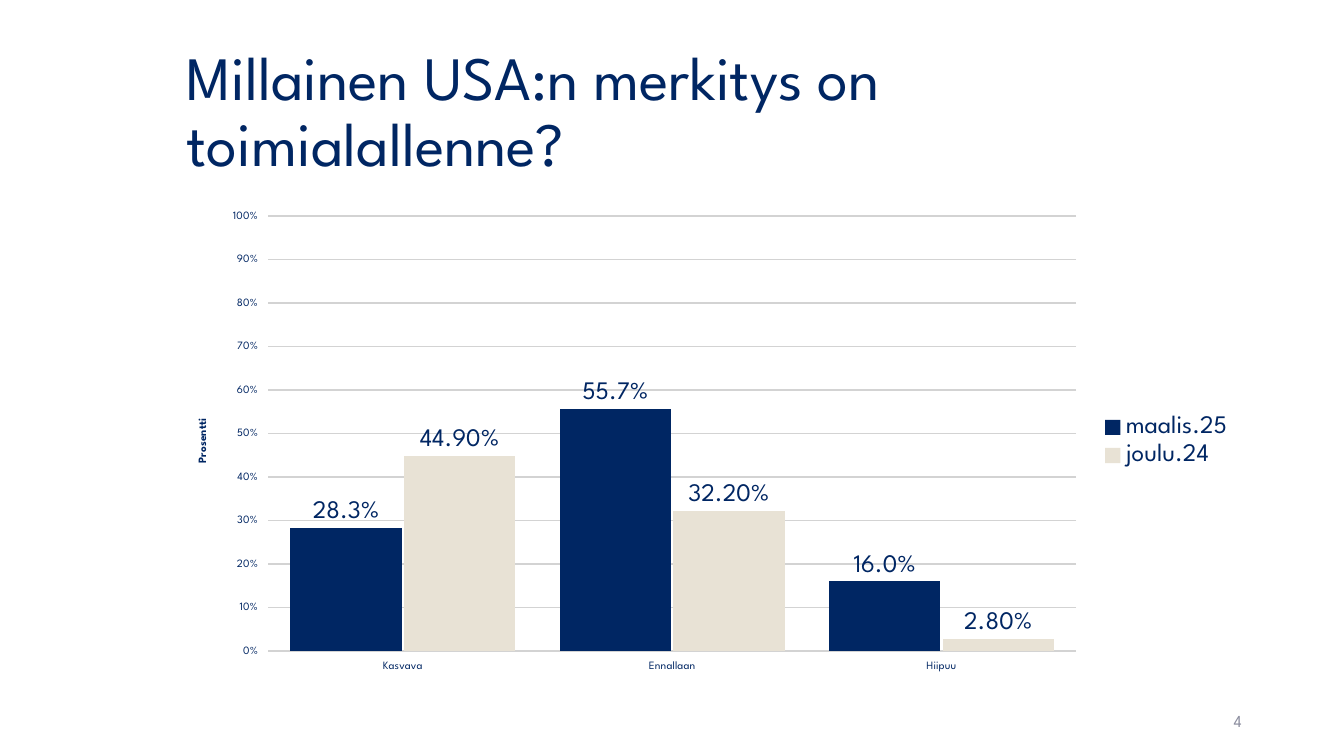
from lxml.etree import SubElement as Sub
from pptx import Presentation
from pptx.chart.data import CategoryChartData as Data
from pptx.dml.color import RGBColor as RGB
from pptx.enum.chart import XL_CHART_TYPE as Kind, XL_LABEL_POSITION as Spot
from pptx.enum.chart import XL_LEGEND_POSITION as Side
from pptx.enum.text import MSO_ANCHOR as Anchor, PP_ALIGN as Align
from pptx.oxml.ns import qn
from pptx.util import Pt

HUES = {"navy": "002663", "sand": "E8E2D5", "gray": "8C8E9F", "grid": "D3D3D3"}
FACE = "League Spartan"
LEFT, WIDE = 126, 762.5


def style(font, size, hue="navy"):
    font.name, font.size = FACE, Pt(size)
    font.color.rgb = RGB.from_string(HUES[hue])


def write(frame, text, size=18, hue="navy", align=Align.LEFT, lead=None, after=0):
    par = frame.paragraphs[0]
    par.alignment, par.line_spacing, par.space_after = align, lead, Pt(after)
    run = par.add_run()
    run.text = text
    style(run.font, size, hue)


class Deck:
    """Style and current slide, with one method for each kind of element."""

    def __init__(self):
        self.file = Presentation()
        self.file.slide_width, self.file.slide_height = Pt(960), Pt(540)
        self.page = self.file.slides.add_slide(self.file.slide_layouts[6])

    def text(self, text, x, y, w, h, **look):
        frame = self.page.shapes.add_textbox(Pt(x), Pt(y), Pt(w), Pt(h)).text_frame
        frame.word_wrap, frame.vertical_anchor = True, Anchor.MIDDLE
        write(frame, text, **look)

    def columns(self, names, rows, label, plot, x, y, w, h):
        data = Data()
        data.categories = names
        for name, values, form, hue in rows:
            data.add_series(name, values, number_format=form)
        chart = self.page.shapes.add_chart(
            Kind.COLUMN_CLUSTERED, Pt(x), Pt(y), Pt(w), Pt(h), data).chart
        style(chart.font, 18)
        chart.has_title = False
        chart.has_legend = True
        chart.legend.position = Side.RIGHT
        chart.legend.include_in_layout = False
        style(chart.legend.font, 18)
        self.axes(chart, label)
        self.bars(chart.plots[0], rows)
        self.place(chart, plot)

    def axes(self, chart, label):
        for axis in (chart.category_axis, chart.value_axis):
            style(axis.tick_labels.font, 8)
            axis.format.line.fill.background()
        axis = chart.value_axis
        axis.minimum_scale, axis.maximum_scale, axis.major_unit = 0, 1, 0.1
        axis.tick_labels.number_format = "0%"
        axis.tick_labels.number_format_is_linked = False
        grid = axis.major_gridlines.format.line
        grid.width, grid.color.rgb = Pt(1), RGB.from_string(HUES["grid"])
        write(axis.axis_title.text_frame, label, size=8, align=Align.CENTER)

    def bars(self, plot, rows):
        plot.gap_width, plot.overlap, plot.vary_by_categories = 40, -2, False
        for bar, (name, values, form, hue) in zip(plot.series, rows):
            bar.format.fill.solid()
            bar.format.fill.fore_color.rgb = RGB.from_string(HUES[hue])
            bar.invert_if_negative = False
            tags = bar.data_labels
            tags.show_value, tags.position = True, Spot.OUTSIDE_END
            tags.number_format, tags.number_format_is_linked = form, False
            style(tags.font, 18)

    def place(self, chart, plot):
        area = chart._chartSpace.find(".//" + qn("c:plotArea"))
        for old in area.findall(qn("c:layout")):
            area.remove(old)
        box = Sub(area, qn("c:layout"))
        area.insert(0, box)
        box = Sub(box, qn("c:manualLayout"))
        parts = [("layoutTarget", "inner"), ("xMode", "edge"), ("yMode", "edge")]
        for tag, val in parts + list(zip("xywh", plot)):
            Sub(box, qn("c:" + tag), val=str(val))

    def save(self):
        self.file.save("out.pptx")


def main():
    deck = Deck()
    deck.text("Millainen USA:n merkitys on toimialallenne?",
              LEFT, 28.8, WIDE, 104.4, size=44, lead=0.9)
    deck.columns(
        ["Kasvava", "Ennallaan", "Hiipuu"],
        [("maalis.25", (0.283, 0.557, 0.16), "0.0%", "navy"),
         ("joulu.24", (0.449, 0.322, 0.028), "0.00%", "sand")],
        "Prosentti", (0.086, 0.03, 0.757, 0.907), LEFT, 144, WIDE, 342.7)
    deck.text("4", 678.2, 500.4, 216, 28.8,
              size=12, hue="gray", align=Align.RIGHT, after=6)
    deck.save()


if __name__ == "__main__":
    main()
